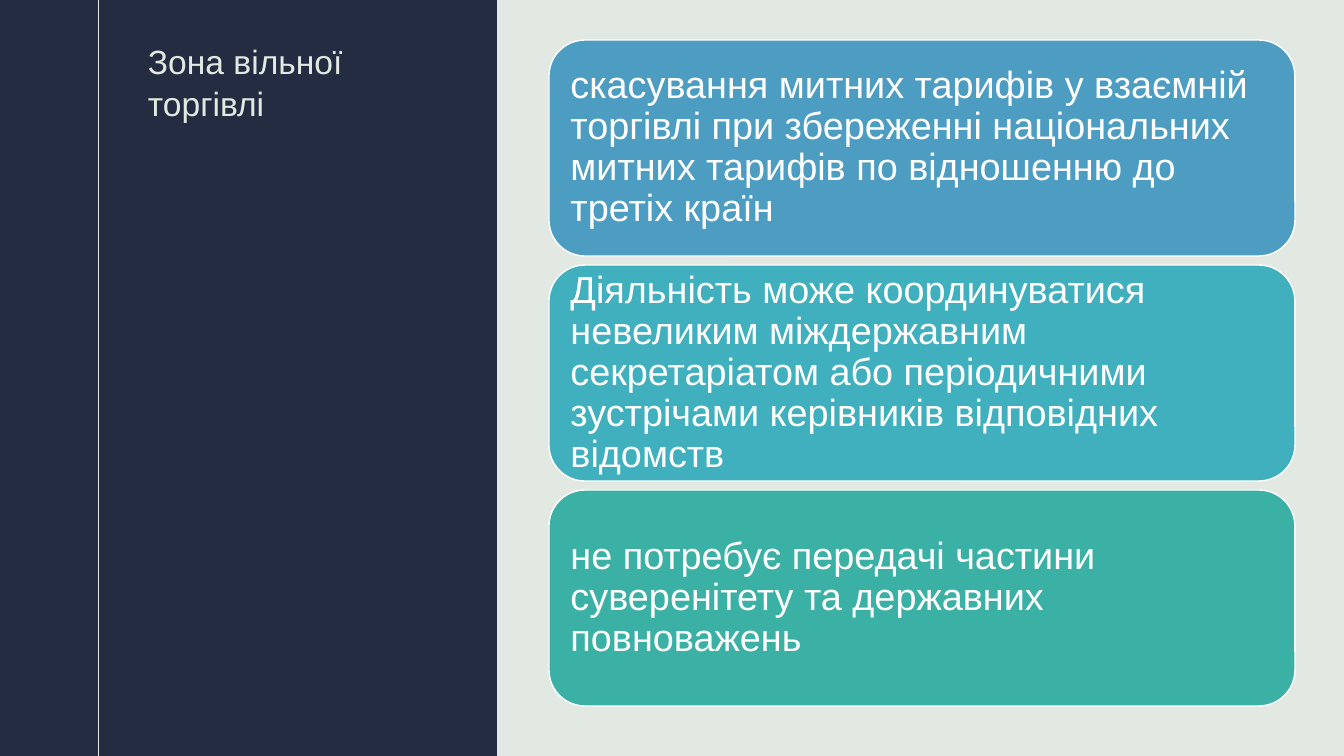
from lxml import etree
from pptx import Presentation
from pptx.dml.color import RGBColor
from pptx.enum.shapes import MSO_CONNECTOR, MSO_SHAPE
from pptx.enum.text import MSO_ANCHOR, PP_ALIGN
from pptx.oxml.ns import qn
from pptx.util import Emu, Pt

STRAIGHT = MSO_CONNECTOR.STRAIGHT
RECTANGLE = MSO_SHAPE.RECTANGLE
ROUNDED = MSO_SHAPE.ROUNDED_RECTANGLE
TOP = MSO_ANCHOR.TOP
MIDDLE = MSO_ANCHOR.MIDDLE
LEFT = PP_ALIGN.LEFT

WIDTH, HEIGHT = 1344, 756
NAVY, MIST, WHITE = "242C41", "E2E8E2", "FFFFFF"
CARD_TOP, CARD_STEP = 40, 225
CARDS = [
    ("4D9DC3", "скасування митних тарифів у взаємній торгівлі при збереженні "
               "національних митних тарифів по відношенню до третіх країн"),
    ("40B0BE", "Діяльність може координуватися невеликим міждержавним секретаріатом "
               "або періодичними зустрічами керівників відповідних відомств"),
    ("3BB1A6", "не потребує передачі частини суверенітету та державних повноважень"),
]


def px(length):
    return Emu(round(length * 914400 / 100.8))


def color(value):
    return RGBColor.from_string(value)


def assign(target, values):
    for name, value in values.items():
        setattr(target, name, value)


class SlideBuilder:
    font = "Arial"

    def __init__(self, deck, background):
        self.slide = deck.slides.add_slide(deck.slide_layouts[6])
        fill = self.slide.background.fill
        fill.solid()
        fill.fore_color.rgb = color(background)

    def shape(self, kind, bounds, fill, line=None):
        shape = self.slide.shapes.add_shape(kind, *map(px, bounds))
        shape.shadow.inherit = False
        shape.fill.solid()
        shape.fill.fore_color.rgb = color(fill)
        if line:
            shape.line.color.rgb = color(line)
            shape.line.width = Pt(1)
        else:
            shape.line.fill.background()
        return shape

    def text_box(self, bounds):
        return self.slide.shapes.add_textbox(*map(px, bounds))

    def set_text(self, box, text, size, ink, inset, anchor, spacing):
        margin = px(inset)
        assign(box.text_frame, {
            "word_wrap": True, "vertical_anchor": anchor,
            "margin_left": margin, "margin_right": margin,
            "margin_top": margin, "margin_bottom": margin,
        })
        para = box.text_frame.paragraphs[0]
        assign(para, {"alignment": LEFT, "line_spacing": spacing})
        span = para.add_run()
        span.text = text
        assign(span.font, {"name": self.font, "size": Pt(size)})
        span.font.color.rgb = color(ink)

    def line(self, start, end, ink):
        line = self.slide.shapes.add_connector(STRAIGHT, *map(px, start + end))
        line.line.color.rgb = color(ink)
        line.line.width = Pt(0.75)
        etree.SubElement(line._element.spPr, qn("a:effectLst"))


def main():
    deck = Presentation()
    assign(deck, {"slide_width": px(WIDTH), "slide_height": px(HEIGHT)})
    page = SlideBuilder(deck, MIST)

    page.shape(RECTANGLE, (0, 0, 497, HEIGHT), NAVY)
    title = page.text_box((148, 39, 300, 671))
    page.set_text(title, "Зона вільної торгівлі", 24, MIST, 0, TOP, 1.05)
    page.line((99, 0), (99, HEIGHT), MIST)

    for index, (fill, text) in enumerate(CARDS):
        top = CARD_TOP + index * CARD_STEP
        card = page.shape(ROUNDED, (549, top, 746, 216), fill, WHITE)
        page.set_text(card, text, 27, WHITE, 11, MIDDLE, 0.9)

    deck.save("out.pptx")


if __name__ == "__main__":
    main()
